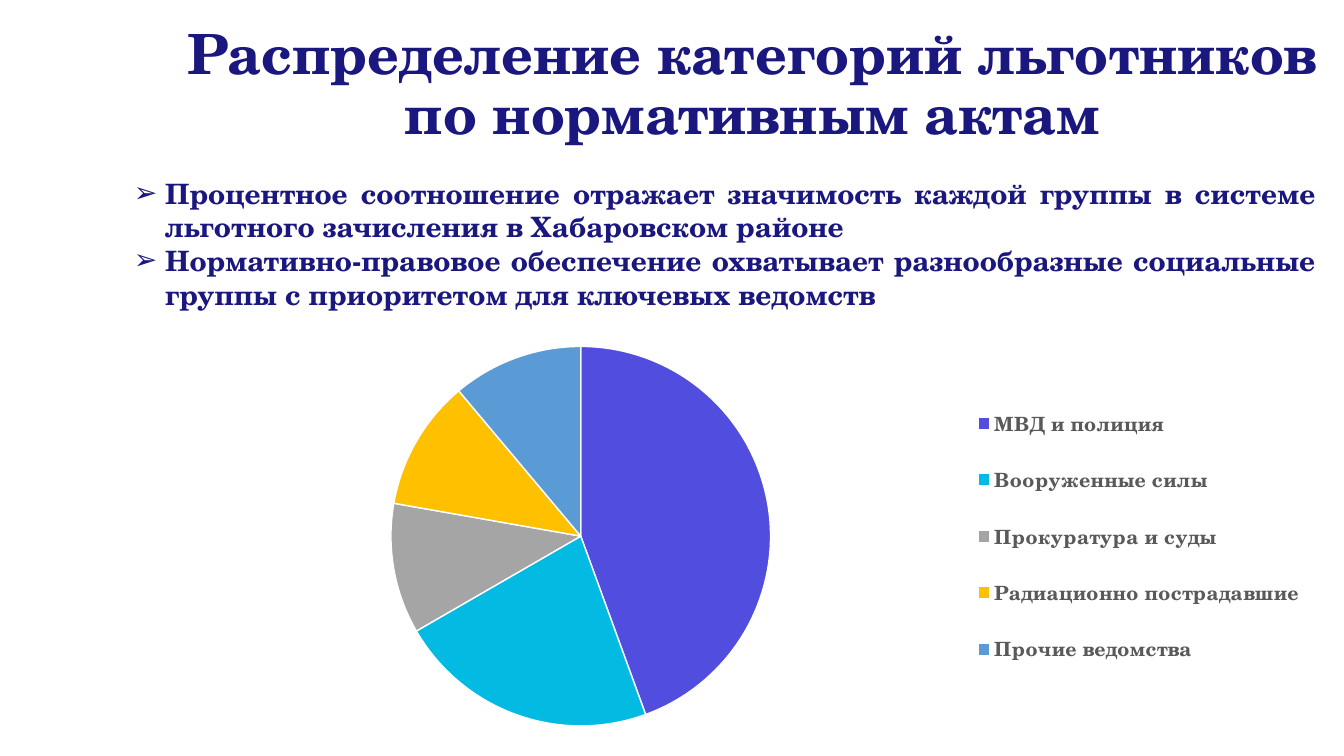
from lxml.etree import SubElement
from pptx import Presentation
from pptx.chart.data import CategoryChartData
from pptx.dml.color import RGBColor
from pptx.enum.chart import XL_CHART_TYPE, XL_LEGEND_POSITION
from pptx.enum.text import MSO_ANCHOR, PP_ALIGN
from pptx.oxml.ns import qn
from pptx.util import Inches, Pt

FONT = "TeX Gyre Schola"
NAVY = "1A177F"
TITLE = "Распределение категорий льготников по нормативным актам"
POINTS = [
    "Процентное соотношение отражает значимость каждой группы "
    "в системе льготного зачисления в Хабаровском районе",
    "Нормативно-правовое обеспечение охватывает разнообразные "
    "социальные группы с приоритетом для ключевых ведомств",
]
GROUPS = [
    ("МВД и полиция", 44, "514DDF"),
    ("Вооруженные силы", 22, "02BAE2"),
    ("Прокуратура и суды", 11, "A5A5A5"),
    ("Радиационно пострадавшие", 11, "FFC000"),
    ("Прочие ведомства", 11, "5B9BD5"),
]


def paint(hue):
    return RGBColor.from_string(hue)


def style(font, size, hue):
    font.name, font.size, font.bold = FONT, Pt(size), True
    font.color.rgb = paint(hue)


def mark(para, sign, hue, indent):
    """Give a paragraph a coloured bullet with a hanging indent."""
    props = para._p.get_or_add_pPr()
    props.set("marL", str(Inches(indent)))
    props.set("indent", str(-Inches(indent)))
    tint = SubElement(props, qn("a:buClr"))
    SubElement(tint, qn("a:srgbClr"), val=hue)
    SubElement(props, qn("a:buFont"), typeface="Arial")
    SubElement(props, qn("a:buChar"), char=sign)


def write(slide, box, lines, size, hue=NAVY, align=PP_ALIGN.LEFT,
          anchor=MSO_ANCHOR.TOP, space=None, sign=None):
    frame = slide.shapes.add_textbox(*map(Inches, box)).text_frame
    frame.word_wrap = True
    frame.vertical_anchor = anchor
    for i, line in enumerate(lines):
        para = frame.add_paragraph() if i else frame.paragraphs[0]
        if sign:
            mark(para, sign, hue, 0.31)
        para.alignment = align
        para.line_spacing = space
        run = para.add_run()
        run.text = line
        style(run.font, size, hue)


def place(parent, x, y, w, h, inner=False):
    """Fix a chart part at shares of the chart's size."""
    layout = parent.find(qn("c:layout"))
    if layout is None:
        layout = parent.makeelement(qn("c:layout"))
        head = parent.find(qn("c:legendPos"))
        parent.insert(0 if head is None else 1, layout)
    manual = SubElement(layout, qn("c:manualLayout"))
    parts = [("layoutTarget", "inner")] if inner else []
    parts += [("xMode", "edge"), ("yMode", "edge"),
              ("x", x), ("y", y), ("w", w), ("h", h)]
    for name, value in parts:
        SubElement(manual, qn("c:" + name), val=str(value))


def draw_pie(slide, box):
    names, values, hues = zip(*GROUPS)
    data = CategoryChartData()
    data.categories = names
    data.add_series("Series 1", values)
    chart = slide.shapes.add_chart(
        XL_CHART_TYPE.PIE, *map(Inches, box), data).chart
    chart.has_title = False
    chart.font.name, chart.font.size = "Arial", Pt(10)
    chart.font.color.rgb = paint("000000")
    plot = chart.plots[0]
    plot.vary_by_categories = True
    for i, hue in enumerate(hues):
        look = plot.series[0].points[i].format
        look.fill.solid()
        look.fill.fore_color.rgb = paint(hue)
        look.line.color.rgb = paint("FFFFFF")
        look.line.width = Pt(1)
    chart.has_legend = True
    legend = chart.legend
    legend.position = XL_LEGEND_POSITION.RIGHT
    legend.include_in_layout = False
    style(legend.font, 14, "595959")
    place(legend._element, 0.69, 0.13, 0.3, 0.75)
    area = chart._chartSpace.chart.plotArea
    place(area, 0.19, 0.04, 0.33, 0.93, inner=True)


def main():
    deck = Presentation()
    deck.slide_width, deck.slide_height = Inches(13.33), Inches(7.5)
    slide = deck.slides.add_slide(deck.slide_layouts[6])
    write(slide, (1.55, 0.15, 11.83, 1.41), [TITLE], 39.6,
          align=PP_ALIGN.CENTER, anchor=MSO_ANCHOR.MIDDLE, space=0.9)
    write(slide, (1.23, 1.7, 11.92, 1.4), POINTS, 20,
          align=PP_ALIGN.JUSTIFY, sign="➢")
    draw_pie(slide, (1.71, 3.26, 11.41, 4.08))
    deck.save("out.pptx")


if __name__ == "__main__":
    main()
